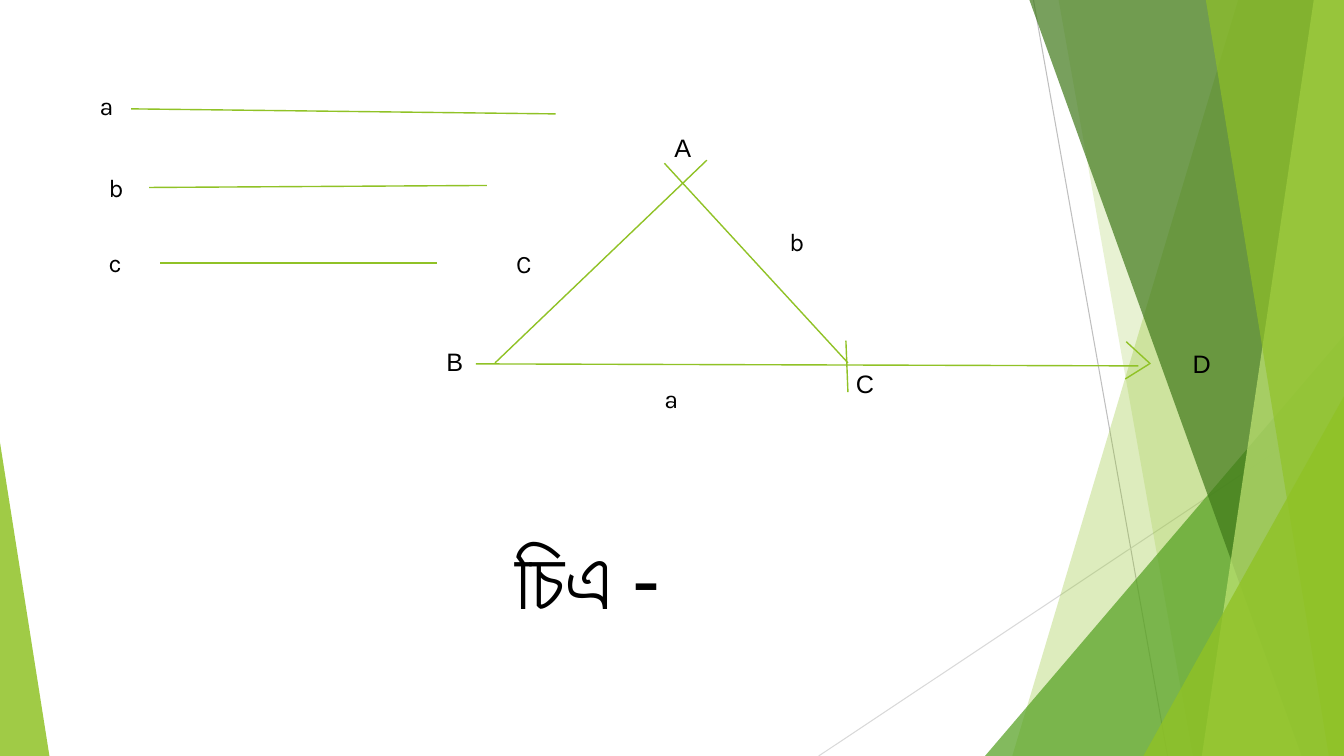
import pptx
import pptx.dml.color
import pptx.enum.shapes
import pptx.enum.text
import pptx.oxml
import pptx.oxml.ns
import pptx.util
from lxml import etree

RGB = pptx.dml.color.RGBColor
LIME = RGB(0x90, 0xC2, 0x26)
GREEN = RGB(0x54, 0xA0, 0x21)
DARK = RGB(0x3F, 0x78, 0x19)
PALE = RGB(0xC0, 0xE4, 0x74)
GREY = RGB(0xBF, 0xBF, 0xBF)
MIST = RGB(0xD9, 0xD9, 0xD9)
BLACK = RGB(0, 0, 0)

# The slide is a grid of square cells; places are (column, row).
COLS, ROWS = 13.33, 7.5
CELL = pptx.util.Inches(1)

FRAME = {"word_wrap": True,
         "auto_size": pptx.enum.text.MSO_AUTO_SIZE.SHAPE_TO_FIT_TEXT}

# Bands run down to the right edge: top column, foot column, colour, opacity
BACK = [(12.28, 10.04, LIME, 30), (10.5, 11.83, LIME, 20)]
FRONT = [(10.21, 12.91, DARK, 70), (13.03, 11.92, PALE, 70),
         (11.96, 13.18, LIME, 65)]

# Start, end
LINES = [
    ((4.72, 3.61), (11.29, 3.63)),
    ((8.41, 3.89), (8.39, 3.38)),
    ((4.91, 3.6), (7.01, 1.59)),
    ((6.59, 1.62), (8.41, 3.6)),
    ((11.17, 3.39), (11.41, 3.61)),
    ((11.16, 3.76), (11.4, 3.61)),
    ((1.3, 1.08), (5.51, 1.13)),
    ((1.48, 1.86), (4.83, 1.84)),
    ((1.59, 2.61), (4.33, 2.61)),
]

# Text, column, row, width
POINTS = [("A", 6.59, 1.26, 0.59), ("B", 4.33, 3.39, 0.49),
          ("C", 8.39, 3.6, 0.9), ("D", 11.73, 3.41, 0.86)]
SIDES = [("b", 7.73, 2.2, 1.03), ("a", 6.49, 3.75, 0.51),
         ("C", 5.02, 2.41, 0.25), ("a", 0.89, 0.85, 0.59),
         ("b", 0.98, 1.66, 0.61), ("c", 0.98, 2.4, 0.61)]


def grid(*cells):
    return [round(n * CELL) for n in cells]


def style(item, values):
    for name, value in values.items():
        setattr(item, name, value)


def paint(shape, color, alpha):
    """Fill with a colour at an opacity in percent, with no outline."""
    shape.shadow.inherit = False
    shape.fill.solid()
    shape.fill.fore_color.rgb = color
    shape.line.fill.background()
    tone = shape.fill._xPr.find(".//" + pptx.oxml.ns.qn("a:srgbClr"))
    etree.SubElement(tone, pptx.oxml.ns.qn("a:alpha"), val=str(alpha * 1000))


def band(slide, top, foot, color, alpha):
    pen = slide.shapes.build_freeform(*grid(top, 0))
    pen.add_line_segments([grid(COLS, 0), grid(COLS, ROWS), grid(foot, ROWS)])
    paint(pen.convert_to_shape(), color, alpha)


def wedge(slide, left, top, wide, peak, color, alpha):
    """Add a triangle on the slide's foot, with its peak at a share of its width."""
    kind = pptx.enum.shapes.MSO_SHAPE.ISOSCELES_TRIANGLE
    shape = slide.shapes.add_shape(kind, *grid(left, top, wide, ROWS - top))
    shape.adjustments[0] = peak
    paint(shape, color, alpha)


def line(slide, start, end, color=LIME, width=1):
    kind = pptx.enum.shapes.MSO_CONNECTOR.STRAIGHT
    rule = slide.shapes.add_connector(kind, *grid(*start, *end))
    rule.line.color.rgb = color
    rule.line.width = pptx.util.Pt(width)
    etree.SubElement(rule._element.spPr, pptx.oxml.ns.qn("a:effectLst"))


def label(slide, text, left, top, wide, face, size=18, high=0.4):
    box = slide.shapes.add_textbox(*grid(left, top, wide, high))
    style(box.text_frame, FRAME)
    run = box.text_frame.paragraphs[0].add_run()
    run.text = text
    style(run.font, {"name": face, "size": pptx.util.Pt(size)})
    run.font.color.rgb = BLACK


def decor(slide):
    line(slide, (10.25, 0), (11.58, ROWS), GREY, 0.75)
    line(slide, (COLS, 4.03), (8.12, ROWS), MIST, 0.75)
    for item in BACK:
        band(slide, *item)
    wedge(slide, 9.77, 3.33, 3.56, 1, GREEN, 72)
    for item in FRONT:
        band(slide, *item)
    wedge(slide, 11.34, 3.93, 1.99, 1, LIME, 80)
    wedge(slide, 0, 4.39, 0.49, 0, LIME, 85)


def main():
    deck = pptx.Presentation()
    deck.slide_width, deck.slide_height = grid(COLS, ROWS)
    slide = deck.slides.add_slide(deck.slide_layouts[6])
    decor(slide)
    for ends in LINES:
        line(slide, *ends)
    for face, items in (("Arial", POINTS), ("Karla", SIDES)):
        for item in items:
            label(slide, *item, face)
    label(slide, "চিএ -", 5.01, 5.16, 2.21, "Arial", 60, 1.11)
    deck.save("out.pptx")


if __name__ == "__main__":
    main()
